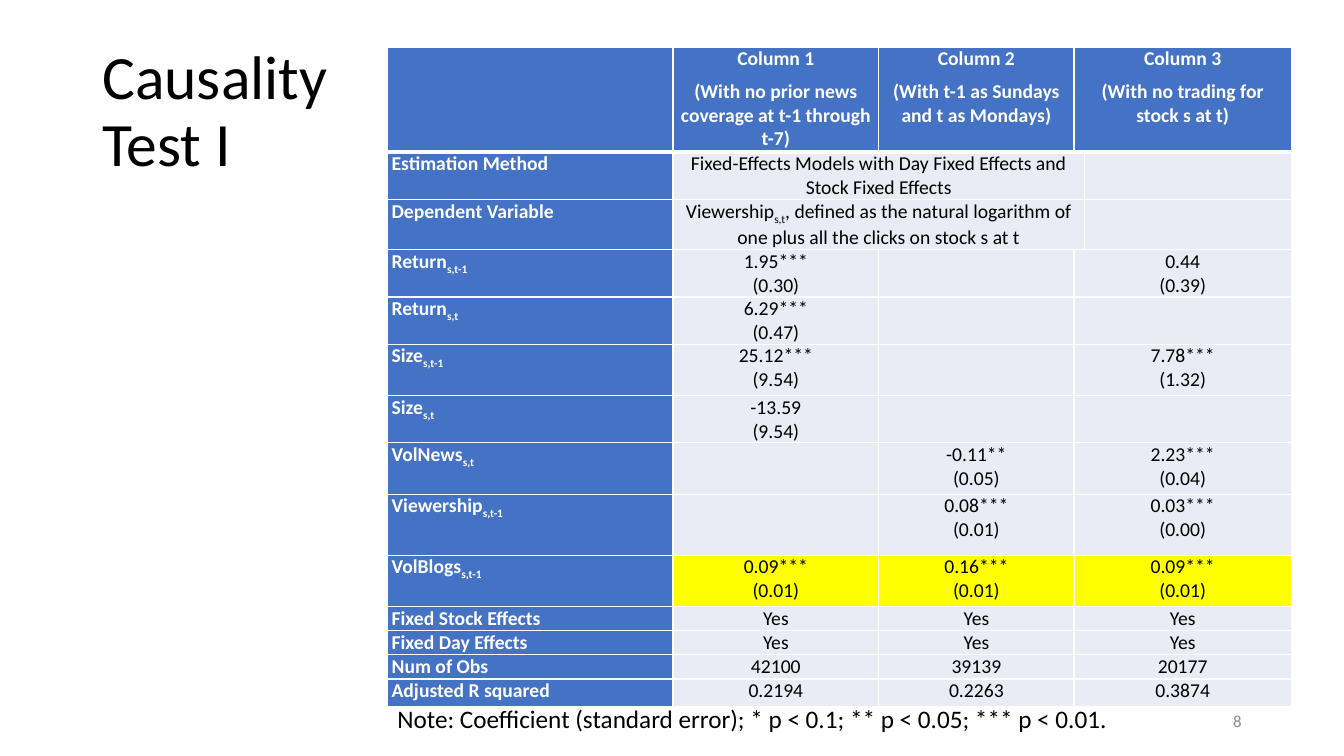
from lxml.etree import SubElement
from pptx import Presentation
from pptx.dml.color import RGBColor
from pptx.enum.text import MSO_ANCHOR, PP_ALIGN
from pptx.oxml.ns import qn
from pptx.util import Pt

PX = 9525  # EMU per px, 96 px to the inch
FONT = "Calibri"
BLUE = RGBColor(0x44, 0x72, 0xC4)
PALE = RGBColor(0xE9, 0xEB, 0xF5)
YELLOW = RGBColor(0xFF, 0xFF, 0x00)
WHITE = RGBColor(0xFF, 0xFF, 0xFF)
BLACK = RGBColor(0x00, 0x00, 0x00)
GRAY = RGBColor(0x8C, 0x8C, 0x8C)

COLUMN_WIDTHS = [272, 196, 186, 10, 197]
# Height, label, then the values of columns 1 to 3.
# Underscores enclose subscripts; a line break starts a new paragraph.
ROWS = [
    (100, "", "Column 1\n(With no prior news coverage at t-1 through t-7)",
     "Column 2\n(With t-1 as Sundays and t as Mondays)",
     "Column 3\n(With no trading for stock s at t)"),
    (45, "Estimation Method",
     "Fixed-Effects Models with Day Fixed Effects and Stock Fixed Effects", "", ""),
    (47, "Dependent Variable",
     "Viewership_s,t_, defined as the natural logarithm of one plus all the clicks on stock s at t",
     "", ""),
    (45, "Return_s,t-1_", "1.95***\n(0.30)", "", "0.44\n(0.39)"),
    (45, "Return_s,t_", "6.29***\n(0.47)", "", ""),
    (49, "Size_s,t-1_", "25.12***\n(9.54)", "", "7.78***\n(1.32)"),
    (45, "Size_s,t_", "-13.59\n(9.54)", "", ""),
    (49, "VolNews_s,t_", "", "-0.11**\n(0.05)", "2.23***\n(0.04)"),
    (58, "Viewership_s,t-1_", "", "0.08***\n(0.01)", "0.03***\n(0.00)"),
    (49, "VolBlogs_s,t-1_", "0.09***\n(0.01)", "0.16***\n(0.01)", "0.09***\n(0.01)"),
    (23, "Fixed Stock Effects", "Yes", "Yes", "Yes"),
    (23, "Fixed Day Effects", "Yes", "Yes", "Yes"),
    (23, "Num of Obs", "42100", "39139", "20177"),
    (26, "Adjusted R squared", "0.2194", "0.2263", "0.3874"),
]
SPANNING_ROWS = (1, 2)
HIGHLIGHT_ROW = 9


def style_paragraph(paragraph, size, color, bold=False, align=PP_ALIGN.LEFT):
    paragraph.alignment = align
    font = paragraph.font
    font.name, font.size, font.bold = FONT, Pt(size), bold
    font.color.rgb = color


def add_runs(paragraph, text):
    for index, part in enumerate(text.split("_")):
        if part:
            run = paragraph.add_run()
            run.text = part
            if index % 2:
                run._r.get_or_add_rPr().set("baseline", "-25000")


def add_text(slide, box, text, size, color, align=PP_ALIGN.LEFT,
             anchor=MSO_ANCHOR.TOP, wrap=True, line_spacing=1.0):
    shape = slide.shapes.add_textbox(*(value * PX for value in box))
    frame = shape.text_frame
    frame.word_wrap = wrap
    frame.vertical_anchor = anchor
    paragraph = frame.paragraphs[0]
    paragraph.line_spacing = line_spacing
    style_paragraph(paragraph, size, color, align=align)
    add_runs(paragraph, text)


def set_borders(cell, bottom_width):
    properties = cell._tc.get_or_add_tcPr()
    for index, side in enumerate(("lnL", "lnR", "lnT", "lnB")):
        width = bottom_width if side == "lnB" else 1
        line = SubElement(properties, qn(f"a:{side}"), w=str(Pt(width)))
        fill = SubElement(line, qn("a:solidFill"))
        SubElement(fill, qn("a:srgbClr"), val=str(WHITE))
        properties.insert(index, line)


def fill_cell(cell, text, fill, is_header, is_label):
    cell.margin_left = cell.margin_right = 4 * PX
    cell.margin_top = cell.margin_bottom = 0
    cell.fill.solid()
    cell.fill.fore_color.rgb = fill
    set_borders(cell, 3 if is_header else 1)
    strong = is_header or is_label
    frame = cell.text_frame
    for index, line in enumerate(text.split("\n")):
        paragraph = frame.add_paragraph() if index else frame.paragraphs[0]
        style_paragraph(paragraph, 14, WHITE if strong else BLACK, strong,
                        PP_ALIGN.LEFT if is_label else PP_ALIGN.CENTER)
        if strong:
            paragraph.space_before = paragraph.space_after = Pt(3)
        add_runs(paragraph, line)


def add_results_table(slide, left, top):
    heights = [row[0] for row in ROWS]
    table = slide.shapes.add_table(
        len(ROWS), len(COLUMN_WIDTHS), left * PX, top * PX,
        sum(COLUMN_WIDTHS) * PX, sum(heights) * PX).table
    for column, width in zip(table.columns, COLUMN_WIDTHS):
        column.width = width * PX
    for row_index, (height, label, first, second, third) in enumerate(ROWS):
        table.rows[row_index].height = height * PX
        # The narrow fourth column joins its left or right neighbours
        if row_index in SPANNING_ROWS:
            texts = (label, first, "", "", third)
            merged = (1, 3)
        else:
            texts = (label, first, second, third, "")
            merged = (3, 4)
        for column_index, text in enumerate(texts):
            is_header, is_label = row_index == 0, column_index == 0
            if is_header or is_label:
                fill = BLUE
            else:
                fill = YELLOW if row_index == HIGHLIGHT_ROW else PALE
            fill_cell(table.cell(row_index, column_index), text, fill,
                      is_header, is_label)
        table.cell(row_index, merged[0]).merge(table.cell(row_index, merged[1]))


def main():
    presentation = Presentation()
    presentation.slide_width = 1280 * PX
    presentation.slide_height = 720 * PX
    slide = presentation.slides.add_slide(presentation.slide_layouts[6])

    # Title
    add_text(slide, (88, 38, 280, 139), "Causality Test I", 44, BLACK,
             anchor=MSO_ANCHOR.MIDDLE, line_spacing=0.9)
    # Regression results
    add_results_table(slide, 369, 45)
    # Note and page number
    add_text(slide, (369, 665, 705, 38),
             "Note: Coefficient (standard error); * p < 0.1; ** p < 0.05; *** p < 0.01.",
             18, BLACK, wrap=False)
    add_text(slide, (904, 667, 288, 38), "8", 12, GRAY,
             align=PP_ALIGN.RIGHT, anchor=MSO_ANCHOR.MIDDLE)

    presentation.save("out.pptx")


if __name__ == "__main__":
    main()
